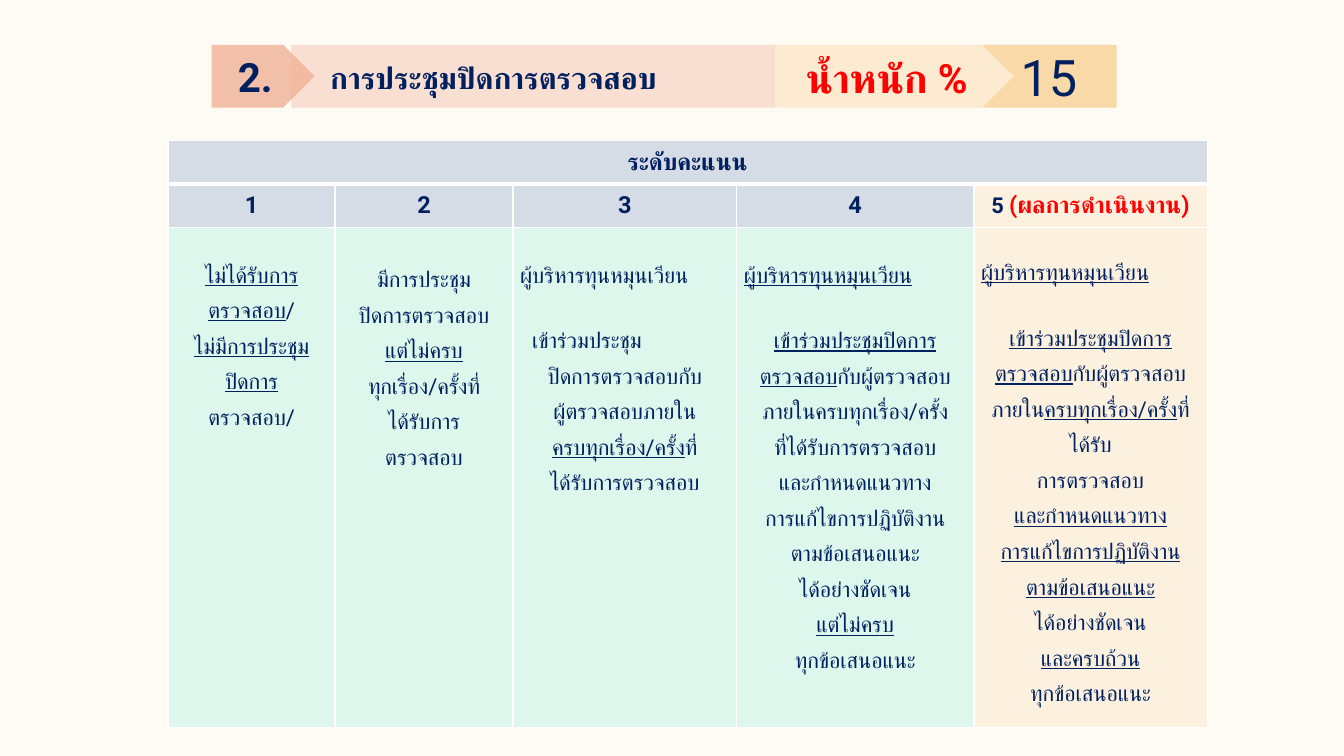
import pptx
import pptx.util
import pptx.dml.color
import pptx.enum.shapes
import pptx.enum.text
import pptx.oxml
import pptx.oxml.ns
from lxml import etree

Inches, Pt = pptx.util.Inches, pptx.util.Pt
SHAPE = pptx.enum.shapes.MSO_SHAPE
ALIGN = pptx.enum.text.PP_ALIGN
ANCHOR = pptx.enum.text.MSO_ANCHOR
qn = pptx.oxml.ns.qn

FONT = "Roboto"
COLORS = {
    "page": "FEFAF4", "navy": "002060", "red": "FF0000", "white": "FFFFFF",
    "title": "F8D8CA", "number": "F0B195", "weight": "FCEBD1", "value": "F7C475",
    "header": "D6DCE5", "level": "C8F5E8", "result": "FCEBD1",
}
COLUMN_WIDTHS = [1.38, 1.47, 1.85, 1.96, 1.93]
ROW_HEIGHTS = [0.36, 0.36, 4.14]

# Each level: top margin and paragraphs of (text, layout); _..._ is underlined
FIRST_LINE = {"align": ALIGN.LEFT}
TAILED_LINE = {"align": ALIGN.LEFT, "tab": 1.8}
LEVELS = [
    (0.21, [("_ไม่ได้รับการ\nตรวจสอบ_/\n_ไม่มีการประชุม\nปิดการ_\nตรวจสอบ/", {})]),
    (0.25, [("มีการประชุม\nปิดการตรวจสอบ\n_แต่ไม่ครบ_\nทุกเรื่อง/ครั้งที่\nได้รับการ\nตรวจสอบ", {})]),
    (0.21, [
        ("ผู้บริหารทุนหมุนเวียน", FIRST_LINE),
        ("เข้าร่วมประชุม", {"align": ALIGN.LEFT, "indent": 0.1, "before": 18}),
        ("ปิดการตรวจสอบกับ\nผู้ตรวจสอบภายใน\n_ครบทุกเรื่อง/ครั้ง_ที่\nได้รับการตรวจสอบ", {}),
    ]),
    (0.21, [
        ("_ผู้บริหารทุนหมุนเวียน\t_", TAILED_LINE),
        ("_เข้าร่วมประชุมปิดการ\nตรวจสอบ_กับผู้ตรวจสอบ\nภายในครบทุกเรื่อง/ครั้ง\n"
         "ที่ได้รับการตรวจสอบ\nและกำหนดแนวทาง\nการแก้ไขการปฏิบัติงาน\nตามข้อเสนอแนะ\n"
         "ได้อย่างชัดเจน\n_แต่ไม่ครบ_\nทุกข้อเสนอแนะ", {"before": 18}),
    ]),
    (0.19, [
        ("_ผู้บริหารทุนหมุนเวียน\t_", TAILED_LINE),
        ("_เข้าร่วมประชุมปิดการ\nตรวจสอบ_กับผู้ตรวจสอบภายใน_ครบทุกเรื่อง/ครั้ง_ที่ได้รับ\n"
         "การตรวจสอบ\n_และกำหนดแนวทาง\nการแก้ไขการปฏิบัติงาน\nตามข้อเสนอแนะ_\n"
         "ได้อย่างชัดเจน\n_และครบถ้วน_\nทุกข้อเสนอแนะ", {"before": 18}),
    ]),
]


def rgb(name):
    return pptx.dml.color.RGBColor.from_string(COLORS[name])


def paint(part, color, opacity=100):
    part.fill.solid()
    part.fill.fore_color.rgb = rgb(color)
    if opacity < 100:
        root = part._tc if hasattr(part, "_tc") else part._element
        properties = root.find(qn("a:tcPr") if hasattr(part, "_tc") else qn("p:spPr"))
        tint = properties.find(qn("a:solidFill"))[0]
        etree.SubElement(tint, qn("a:alpha"), val=str(opacity * 1000))


def style(paragraph, size, color="navy", bold=False, align=ALIGN.CENTER):
    paragraph.alignment = align
    font = paragraph.font
    font.name, font.size, font.bold = FONT, Pt(size), bold
    font.color.rgb = rgb(color)
    defaults = paragraph._p.pPr.find(qn("a:defRPr"))
    etree.SubElement(defaults, qn("a:cs"), typeface=FONT)


def write_marked(paragraph, text):
    for i, stretch in enumerate(text.split("_")):
        for j, line in enumerate(stretch.split("\n")):
            if j:
                paragraph.add_line_break()
            if line:
                run = paragraph.add_run()
                run.text = line
                if i % 2:
                    run.font.underline = True


def border(cell):
    properties = cell._tc.get_or_add_tcPr()
    for i, side in enumerate(("lnL", "lnR", "lnT", "lnB")):
        properties.insert(i, pptx.oxml.parse_xml(
            f'<a:{side} {pptx.oxml.ns.nsdecls("a")} w="12700"><a:solidFill>'
            f'<a:srgbClr val="{COLORS["white"]}"/></a:solidFill></a:{side}>'))


def add_banner(slide, left, top, height):
    # Offset, width, outline, colour, opacity, text, size, text colour, bold
    parts = [
        (0.66, 4.0, SHAPE.RECTANGLE, "title", 80, "การประชุมปิดการตรวจสอบ", 18, "navy", True),
        (0, 0.85, SHAPE.PENTAGON, "number", 80, "2.", 24, "navy", True),
        (6.36, 1.12, SHAPE.RECTANGLE, "value", 60, "15", 30, "navy", False),
        (4.66, 1.97, SHAPE.PENTAGON, "weight", 100, "น้ำหนัก %", 24, "red", True),
    ]
    for offset, width, outline, color, opacity, text, size, text_color, bold in parts:
        part = slide.shapes.add_shape(outline, Inches(left + offset), Inches(top),
                                      Inches(width), Inches(height))
        part.shadow.inherit = False
        part.line.fill.background()
        paint(part, color, opacity)
        frame = part.text_frame
        frame.word_wrap = True
        frame.vertical_anchor = ANCHOR.BOTTOM if color == "weight" else ANCHOR.MIDDLE
        paragraph = frame.paragraphs[0]
        paragraph.text = text
        style(paragraph, size, text_color, bold)
        if color == "title":
            paragraph.alignment = ALIGN.LEFT
            paragraph.line_spacing = Pt(11.7)
            frame.margin_left, frame.margin_top = Inches(0.32), Inches(0.21)


def fill_level(cell, top_margin, paragraphs):
    cell.margin_top = Inches(top_margin)
    frame = cell.text_frame
    for i, (text, layout) in enumerate(paragraphs):
        paragraph = frame.paragraphs[0] if i == 0 else frame.add_paragraph()
        properties = paragraph._p.get_or_add_pPr()
        if "indent" in layout:
            properties.set("marL", str(Inches(layout["indent"])))
        if "tab" in layout:
            tabs = etree.SubElement(properties, qn("a:tabLst"))
            etree.SubElement(tabs, qn("a:tab"), pos=str(Inches(layout["tab"])), algn="l")
        style(paragraph, 13, align=layout.get("align", ALIGN.CENTER))
        paragraph.line_spacing = 1.4
        if "before" in layout:
            paragraph.space_before = Pt(layout["before"])
        write_marked(paragraph, text)


def add_score_table(slide, left, top):
    table = slide.shapes.add_table(
        len(ROW_HEIGHTS), len(COLUMN_WIDTHS), Inches(left), Inches(top),
        Inches(sum(COLUMN_WIDTHS)), Inches(sum(ROW_HEIGHTS))).table
    table.first_row = table.horz_banding = False
    for column, width in zip(table.columns, COLUMN_WIDTHS):
        column.width = Inches(width)
    for row, height in zip(table.rows, ROW_HEIGHTS):
        row.height = Inches(height)
    for cell in table.iter_cells():
        cell.margin_left = cell.margin_right = Inches(0.06)
        cell.margin_top = cell.margin_bottom = 0
        border(cell)

    # Heading across all levels
    heading = table.cell(0, 0)
    heading.merge(table.cell(0, len(COLUMN_WIDTHS) - 1))
    paint(heading, "header")
    heading.vertical_anchor = ANCHOR.MIDDLE
    heading.text = "ระดับคะแนน"
    style(heading.text_frame.paragraphs[0], 14, bold=True)
    heading._tc.tcPr.find(qn("a:lnB")).set("w", str(Pt(3)))

    # Level numbers and descriptions
    for i, (top_margin, paragraphs) in enumerate(LEVELS):
        is_result = i == len(LEVELS) - 1
        number, description = table.cell(1, i), table.cell(2, i)
        paint(number, "result" if is_result else "header", 60 if is_result else 100)
        paint(description, "result" if is_result else "level", 60)
        number.vertical_anchor = ANCHOR.MIDDLE
        number.text = f"{i + 1} " if is_result else str(i + 1)
        label = number.text_frame.paragraphs[0]
        style(label, 14, bold=True)
        if is_result:
            label.runs[0].font.size = Pt(13)
            result = label.add_run()
            result.text = "(ผลการดำเนินงาน)"
            result.font.color.rgb = rgb("red")
        fill_level(description, top_margin, paragraphs)


def main():
    deck = pptx.Presentation()
    deck.slide_width, deck.slide_height = Inches(11.11), Inches(6.25)
    slide = deck.slides.add_slide(deck.slide_layouts[6])
    slide.background.fill.solid()
    slide.background.fill.fore_color.rgb = rgb("page")
    add_score_table(slide, 1.39, 1.16)
    add_banner(slide, 1.75, 0.37, 0.52)
    deck.save("out.pptx")


if __name__ == "__main__":
    main()
